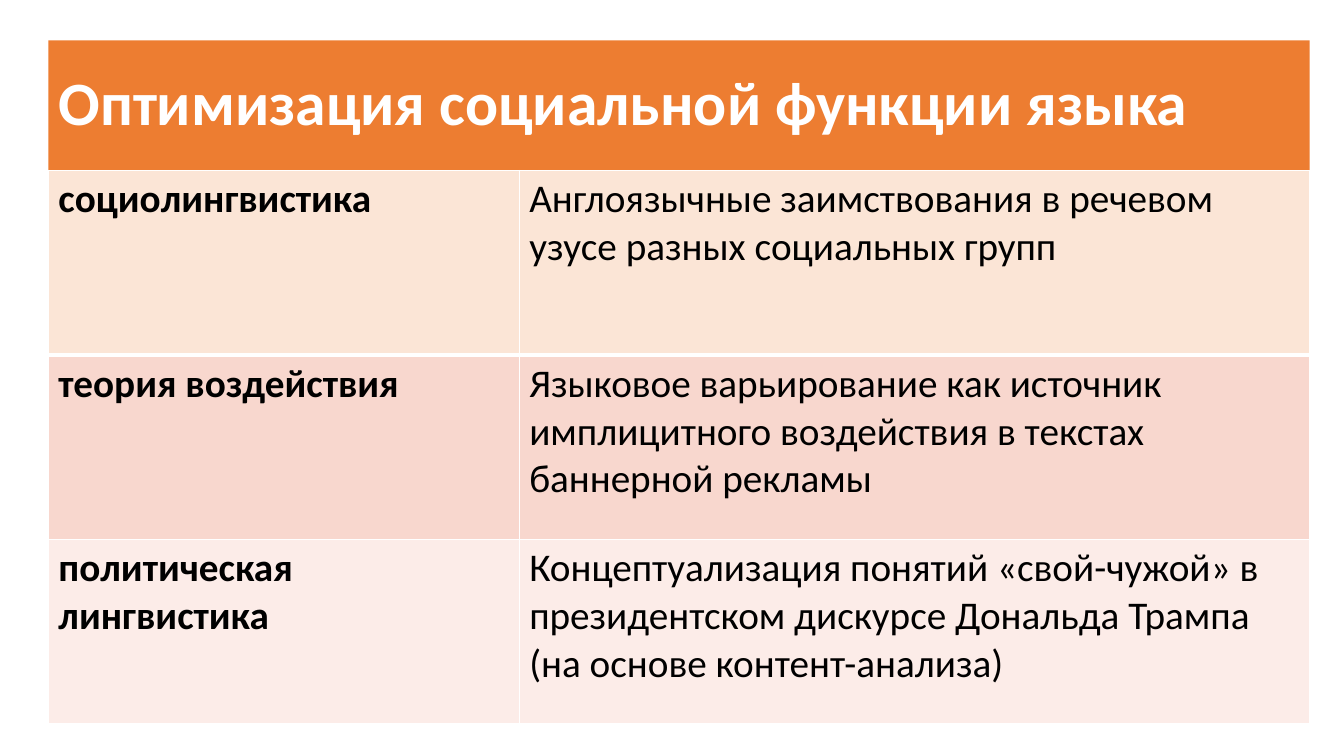
from dataclasses import dataclass

from lxml import etree
from pptx import Presentation
from pptx import util as u
from pptx.dml.color import RGBColor
from pptx.enum import text
from pptx.oxml.ns import qn

PX = u.Inches(1) // 100


@dataclass(frozen=True)
class Theme:
    font: str = "Calibri"
    title_size: int = 44
    body_size: int = 28
    banner: str = "ED7D31"
    light: str = "FFFFFF"
    dark: str = "000000"
    row_fills: tuple = ("FBE5D6", "F8D7CE", "FCECE8")
    thin: int = 1
    thick: int = 3


THEME = Theme()
TITLE = "Оптимизация социальной функции языка"
TOPICS = (
    ("социолингвистика",
     "Англоязычные заимствования в речевом узусе разных социальных групп"),
    ("теория воздействия",
     "Языковое варьирование как источник имплицитного воздействия "
     "в текстах баннерной рекламы"),
    ("политическая лингвистика",
     "Концептуализация понятий «свой-чужой» в президентском дискурсе "
     "Дональда Трампа (на основе контент-анализа)"),
)
LEFT, TOP, WIDTH = 48, 40, 1251
TITLE_HEIGHT, ROW_HEIGHT = 129, 183
COLUMN_WIDTHS = (467, WIDTH - 467)


def set_all(target, values):
    for name, value in values.items():
        setattr(target, name, value)


def paint(target, color):
    target.fill.solid()
    target.fill.fore_color.rgb = RGBColor.from_string(color)


def write(frame, words, size, color, bold):
    para = frame.paragraphs[0]
    para.alignment = text.PP_ALIGN.LEFT
    span = para.add_run()
    span.text = words
    set_all(span.font, {"name": THEME.font, "size": u.Pt(size), "bold": bold})
    span.font.color.rgb = RGBColor.from_string(color)
    return para


def set_borders(cell, widths):
    """Draw light borders; widths maps L, R, T and B, in that order, to points."""
    props = cell._tc.get_or_add_tcPr()
    for place, (side, width) in enumerate(widths.items()):
        line = etree.Element(qn(f"a:ln{side}"), w=str(u.Pt(width)))
        fill = etree.SubElement(line, qn("a:solidFill"))
        etree.SubElement(fill, qn("a:srgbClr"), val=THEME.light)
        props.insert(place, line)


def add_title(page):
    title = page.shapes.title
    set_all(title, {"left": LEFT * PX, "top": TOP * PX,
                    "width": WIDTH * PX, "height": TITLE_HEIGHT * PX})
    paint(title, THEME.banner)
    set_all(title.text_frame, {"word_wrap": True,
                               "auto_size": text.MSO_AUTO_SIZE.NONE,
                               "vertical_anchor": text.MSO_ANCHOR.MIDDLE})
    para = write(title.text_frame, TITLE, THEME.title_size, THEME.light, True)
    para.line_spacing = 0.9


def add_topics(page):
    table = page.shapes.add_table(
        len(TOPICS), len(COLUMN_WIDTHS), LEFT * PX, (TOP + TITLE_HEIGHT) * PX,
        WIDTH * PX, len(TOPICS) * ROW_HEIGHT * PX).table
    set_all(table, {"first_row": False, "horz_banding": False})
    for column, width in zip(table.columns, COLUMN_WIDTHS):
        column.width = width * PX
    for r, (topic, fill) in enumerate(zip(TOPICS, THEME.row_fills)):
        table.rows[r].height = ROW_HEIGHT * PX
        above = THEME.thick if r == 1 else THEME.thin
        below = THEME.thick if r == 0 else THEME.thin
        for c, words in enumerate(topic):
            cell = table.cell(r, c)
            paint(cell, fill)
            set_borders(cell, {"L": THEME.thin, "R": THEME.thin,
                               "T": above, "B": below})
            write(cell.text_frame, words, THEME.body_size, THEME.dark, c == 0)


def main():
    deck = Presentation()
    set_all(deck, {"slide_width": 1333 * PX, "slide_height": 750 * PX})
    page = deck.slides.add_slide(deck.slide_layouts.get_by_name("Title Only"))
    add_title(page)
    add_topics(page)
    deck.save("out.pptx")


if __name__ == "__main__":
    main()
